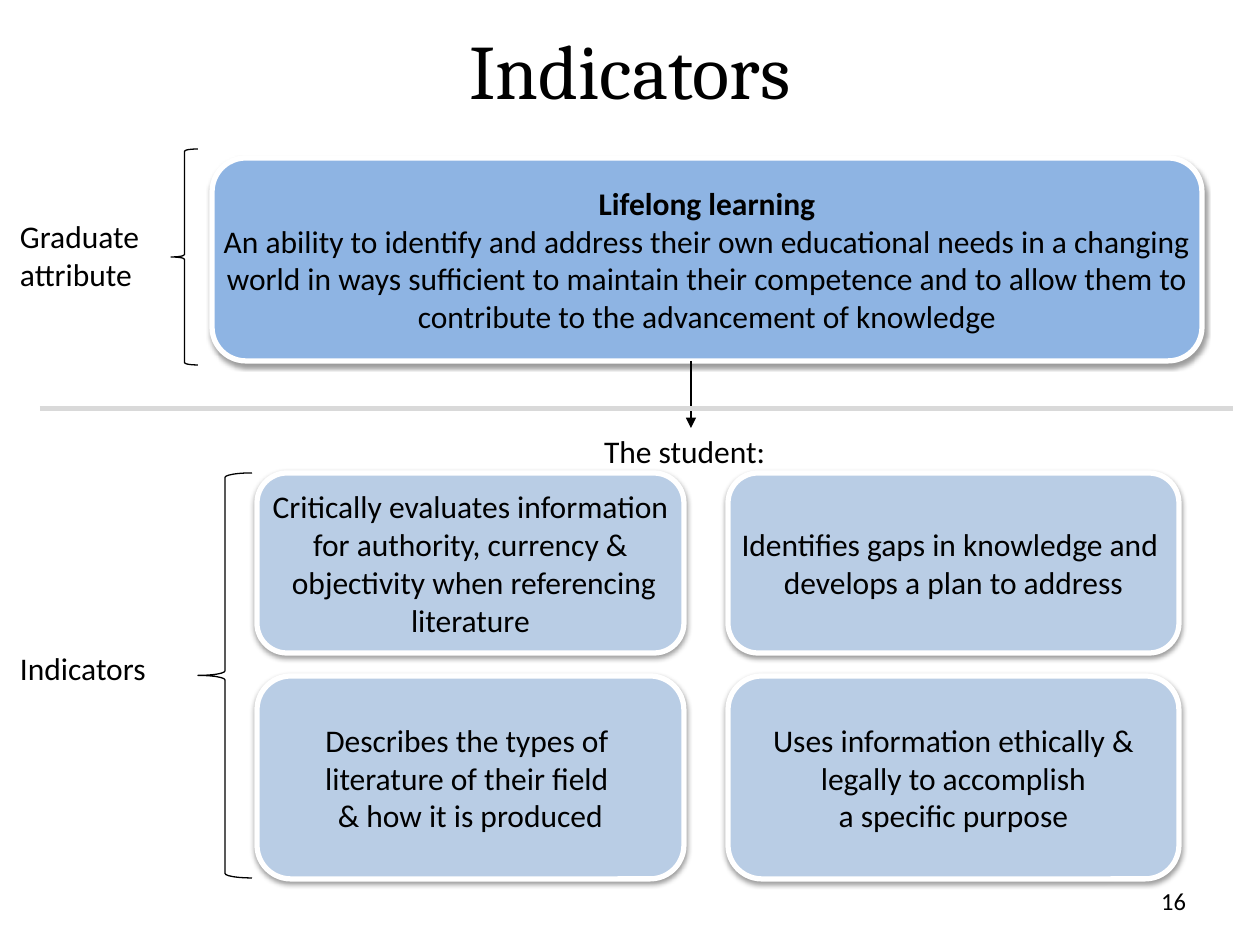
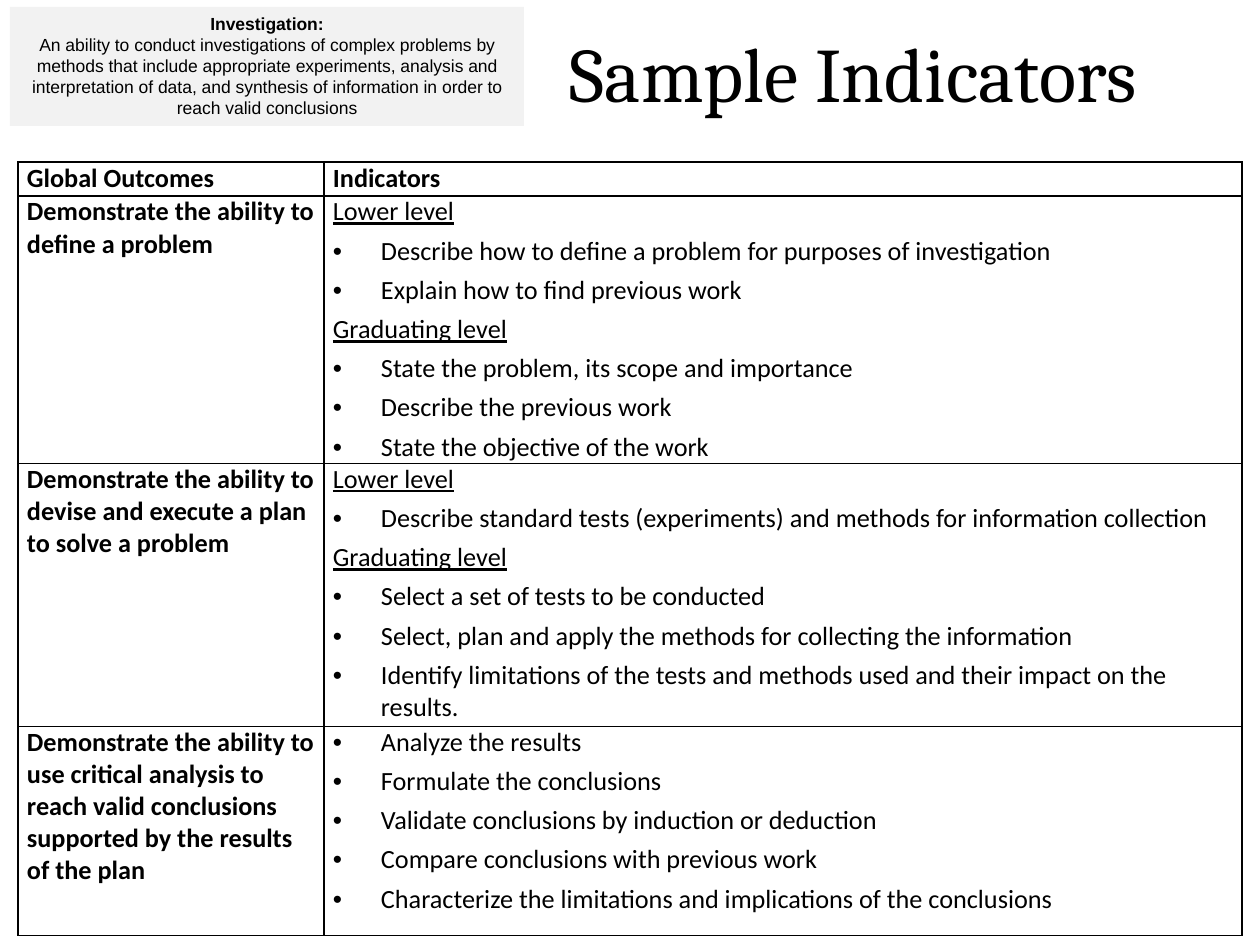
from lxml import etree
from pptx import Presentation
from pptx.dml.color import RGBColor
from pptx.enum.shapes import MSO_CONNECTOR, MSO_SHAPE
from pptx.enum.text import MSO_ANCHOR, MSO_AUTO_SIZE, PP_ALIGN
from pptx.oxml.ns import qn
from pptx.util import Pt

PX = 914400 / 126
LEFT, CENTER, RIGHT = PP_ALIGN.LEFT, PP_ALIGN.CENTER, PP_ALIGN.RIGHT
TOP, MIDDLE = MSO_ANCHOR.TOP, MSO_ANCHOR.MIDDLE
NO_FIT = MSO_AUTO_SIZE.NONE
ROUNDED, RECT, BRACE = MSO_SHAPE.ROUNDED_RECTANGLE, MSO_SHAPE.RECTANGLE, MSO_SHAPE.LEFT_BRACE
STRAIGHT = MSO_CONNECTOR.STRAIGHT

BLACK, WHITE = "000000", "FFFFFF"
ATTRIBUTE_BLUE, INDICATOR_BLUE = "8EB4E3", "B9CDE5"
RULE_GREY, PANEL_GREY = "D9D9D9", "F2F2F2"
TITLE_FONT, BODY_FONT, PANEL_FONT = "Cambria", "Calibri", "Arial"

ATTRIBUTE = [
    "Lifelong learning",
    "An ability to identify and address their own educational needs in a changing",
    "world in ways sufficient to maintain their competence and to allow them to",
    "contribute to the advancement of knowledge",
]
INDICATORS = [
    [
        ["Critically evaluates information", "for authority, currency &",
         " objectivity when referencing", "literature"],
        ["Identifies gaps in knowledge and ", "develops a plan to address"],
    ],
    [
        ["Describes the types of ", "literature of their field ", "& how it is produced"],
        ["Uses information ethically &", " legally to accomplish ", "a specific purpose"],
    ],
]
INVESTIGATION = [
    "Investigation:",
    "An ability to conduct investigations of complex problems by methods that include "
    "appropriate experiments, analysis and interpretation of data, and synthesis of "
    "information in order to reach valid conclusions",
]
LOWER, GRADUATING = "Lower level", "Graduating level"
OUTCOMES = [
    ("Demonstrate the ability to define a problem", [
        (LOWER, ["Describe how to define a problem for purposes of investigation",
                 "Explain how to find previous work"]),
        (GRADUATING, ["State the problem, its scope and importance",
                      "Describe the previous work",
                      "State the objective of the work"]),
    ]),
    ("Demonstrate the ability to devise and execute a plan to solve a problem", [
        (LOWER, ["Describe standard tests (experiments) and methods for information collection"]),
        (GRADUATING, ["Select a set of tests to be conducted",
                      "Select, plan and apply the methods for collecting the information",
                      "Identify limitations of the tests and methods used and their impact "
                      "on the results."]),
    ]),
    ("Demonstrate the ability to use critical analysis to reach valid conclusions "
     "supported by the results of the plan", [
        (None, ["Analyze the results",
                "Formulate the conclusions",
                "Validate conclusions by induction or deduction",
                "Compare conclusions with previous work",
                "Characterize the limitations and implications of the conclusions"]),
    ]),
]


def px(*lengths):
    """Turn pixel lengths into EMU."""
    return [round(n * PX) for n in lengths]


def rgb(color):
    """Turn a hex string into a colour."""
    return RGBColor.from_string(color)


def add_child(parent, tag, **attrs):
    """Append a drawing element with the given attributes."""
    return etree.SubElement(parent, qn(f"a:{tag}"), {k: str(v) for k, v in attrs.items()})


def set_frame(tf, anchor=TOP, wrap=True, insets=(11, 5, 11, 5)):
    """Set anchoring, wrapping and insets of a text frame."""
    tf.auto_size, tf.word_wrap, tf.vertical_anchor = NO_FIT, wrap, anchor
    tf.margin_left, tf.margin_top, tf.margin_right, tf.margin_bottom = px(*insets)


def add_text(tf, text, size, font=BODY_FONT, align=LEFT, bold=False, underline=False):
    """Write one paragraph, reusing the first while it is empty."""
    p = tf.paragraphs[0] if not tf.paragraphs[0].runs else tf.add_paragraph()
    p.alignment = align
    r = p.add_run()
    r.text = text
    r.font.name, r.font.size = font, Pt(size)
    r.font.bold, r.font.underline = bold, underline
    r.font.color.rgb = rgb(BLACK)
    return p


def add_title(s, box, text, align):
    """Place and format the title placeholder."""
    sp = s.shapes.title
    sp.left, sp.top, sp.width, sp.height = px(*box)
    set_frame(sp.text_frame, MIDDLE, insets=(13, 6, 13, 6))
    add_text(sp.text_frame, text, 44, TITLE_FONT, align)


def add_label(s, box, lines, size=18, align=LEFT, anchor=TOP):
    """Add a plain text box with one paragraph per line."""
    tf = s.shapes.add_textbox(*px(*box)).text_frame
    set_frame(tf, anchor)
    for line in lines:
        add_text(tf, line, size, align=align)


def add_card(s, box, lines, fill, headed=False):
    """Add a rounded card with a white outline and a soft shadow."""
    sp = s.shapes.add_shape(ROUNDED, *px(*box))
    sp.fill.solid()
    sp.fill.fore_color.rgb = rgb(fill)
    sp.line.color.rgb, sp.line.width = rgb(WHITE), Pt(3)
    effects = add_child(sp._element.spPr, "effectLst")
    shadow = add_child(effects, "outerShdw", blurRad=Pt(3.1), dist=Pt(1.6),
                       dir=5400000, rotWithShape=0)
    add_child(add_child(shadow, "srgbClr", val=BLACK), "alpha", val=38000)
    set_frame(sp.text_frame, MIDDLE, wrap=False)
    for i, line in enumerate(lines):
        add_text(sp.text_frame, line, 18, align=CENTER, bold=headed and i == 0)


def add_brace(s, box):
    """Add a thin left brace."""
    sp = s.shapes.add_shape(BRACE, *px(*box))
    sp.shadow.inherit = False
    sp.fill.background()
    sp.line.color.rgb, sp.line.width = rgb(BLACK), Pt(0.75)


def add_line(s, ends, color, width, arrow=False):
    """Add a straight line, with an arrowhead at its end if wanted."""
    c = s.shapes.add_connector(STRAIGHT, *px(*ends))
    c.line.color.rgb, c.line.width = rgb(color), Pt(width)
    if arrow:
        add_child(c.line._get_or_add_ln(), "tailEnd", type="triangle")
    add_child(c._element.spPr, "effectLst")


def add_attribute(s, x, y):
    """Add the graduate attribute with its brace and label."""
    add_label(s, (x, y + 63, 158, 81), ["Graduate", "attribute"])
    add_brace(s, (x + 162, y, 27, 216))
    add_card(s, (x + 203, y + 9, 990, 203), ATTRIBUTE, ATTRIBUTE_BLUE, headed=True)


def add_indicator_grid(s, x, y):
    """Add the grid of indicators with its brace and labels."""
    add_label(s, (x + 584, y - 46, 246, 47), ["The student:"])
    add_label(s, (x, y + 171, 180, 81), ["Indicators"])
    add_brace(s, (x + 189, y, 54, 405))
    columns, rows = [(248, 427), (719, 451)], [(0, 180), (203, 203)]
    for (top, height), row in zip(rows, INDICATORS):
        for (left, width), lines in zip(columns, row):
            add_card(s, (x + left, y + top, width, height), lines, INDICATOR_BLUE)


def add_panel(s, box):
    """Add the grey definition panel."""
    sp = s.shapes.add_shape(RECT, *px(*box))
    sp.shadow.inherit = False
    sp.fill.solid()
    sp.fill.fore_color.rgb = rgb(PANEL_GREY)
    sp.line.fill.background()
    set_frame(sp.text_frame, insets=(13, 6, 13, 6))
    for i, line in enumerate(INVESTIGATION):
        add_text(sp.text_frame, line, 10, PANEL_FONT, CENTER, bold=i == 0)


def format_cell(cell):
    """Give a cell thin black borders, no fill and narrow insets."""
    cell.fill.background()
    cell.margin_left, cell.margin_right, cell.margin_top, cell.margin_bottom = px(9, 9, 0, 0)
    tcPr = cell._tc.get_or_add_tcPr()
    for i, side in enumerate(("lnL", "lnR", "lnT", "lnB")):
        ln = add_child(tcPr, side, w=Pt(1))
        add_child(add_child(ln, "solidFill"), "srgbClr", val=BLACK)
        tcPr.insert(i, ln)


def add_cell_text(cell, text, bullet=False, **style):
    """Write one table paragraph, bulleted if wanted."""
    p = add_text(cell.text_frame, text, 15, **style)
    p.space_before = p.space_after = Pt(2)
    if bullet:
        pPr = p._p.get_or_add_pPr()
        indent, = px(48)
        pPr.set("marL", str(indent))
        pPr.set("indent", str(-indent))
        add_child(pPr, "buFont", typeface="Arial")
        add_child(pPr, "buChar", char="•")


def add_outcome_table(s, x, y):
    """Add the table of outcomes and their indicators."""
    widths, heights = px(306, 918), px(34, 267, 263, 209)
    table = s.shapes.add_table(len(heights), len(widths), *px(x, y),
                               sum(widths), sum(heights)).table
    table.first_row = table.horz_banding = False
    for column, width in zip(table.columns, widths):
        column.width = width
    for row, height in zip(table.rows, heights):
        row.height = height
    for cell in table.iter_cells():
        format_cell(cell)
    for i, heading in enumerate(("Global Outcomes", "Indicators")):
        add_cell_text(table.cell(0, i), heading, bold=True)
    for i, (outcome, levels) in enumerate(OUTCOMES, 1):
        add_cell_text(table.cell(i, 0), outcome, bold=True)
        for level, indicators in levels:
            if level:
                add_cell_text(table.cell(i, 1), level, underline=True)
            for indicator in indicators:
                add_cell_text(table.cell(i, 1), indicator, bullet=True)


def build_indicators(s):
    """Build the slide that leads from attribute to indicators."""
    add_title(s, (0, -10, 1260, 158), "Indicators", CENTER)
    add_label(s, (903, 876, 294, 50), ["16"], 14, RIGHT, MIDDLE)
    add_attribute(s, 9, 149)
    add_line(s, (691, 361, 691, 428), BLACK, 0.75, arrow=True)
    add_line(s, (40, 409, 1233, 409), RULE_GREY, 2.83)
    add_indicator_grid(s, 9, 473)


def build_samples(s):
    """Build the slide with the table of sample indicators."""
    add_title(s, (557, 49, 703, 45), "Sample Indicators", LEFT)
    add_outcome_table(s, 18, 162)
    add_panel(s, (10, 7, 514, 119))


def main():
    """Build and save the presentation."""
    prs = Presentation()
    prs.slide_width, prs.slide_height = px(1260, 945)
    for build in (build_indicators, build_samples):
        build(prs.slides.add_slide(prs.slide_layouts[5]))
    prs.save("out.pptx")


if __name__ == "__main__":
    main()
